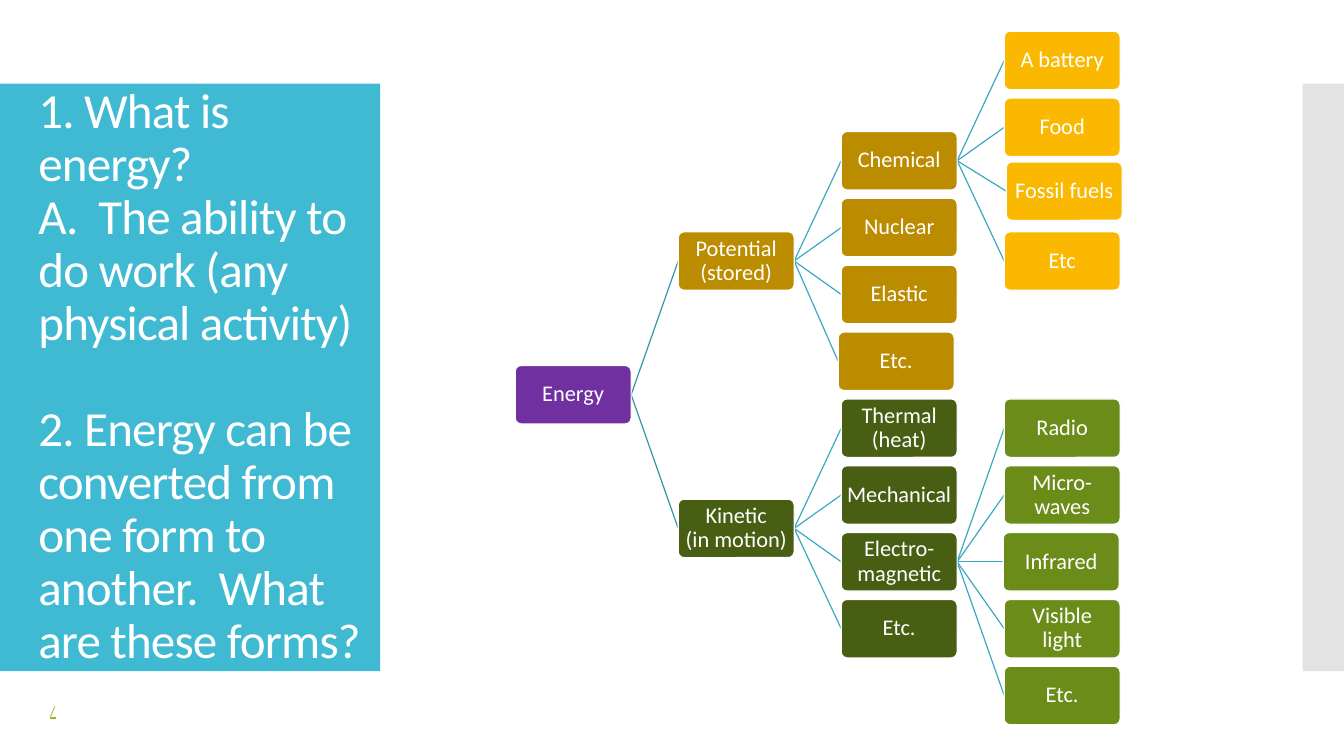
import pptx
import pptx.util
import pptx.dml.color
import pptx.enum.shapes
import pptx.enum.text
import pptx.oxml
import lxml.etree
from pptx.oxml.ns import qn

RGB = pptx.dml.color.RGBColor
WHITE = RGB(0xFF, 0xFF, 0xFF)
TEAL = RGB(0x40, 0xBA, 0xD2)
GREY = RGB(0xC8, 0xC8, 0xC8)
LIME = RGB(0x90, 0xBB, 0x23)
PURPLE = RGB(0x70, 0x30, 0xA0)
BROWN = RGB(0xBB, 0x8B, 0x00)
GOLD = RGB(0xFA, 0xB9, 0x00)
DARK = RGB(0x48, 0x5E, 0x12)
GREEN = RGB(0x6C, 0x8C, 0x1A)
LINK = RGB(0x33, 0x95, 0xA8)
TWIG = RGB(0x3A, 0xA9, 0xBF)

# Content
TITLE = ["1. What is energy?",
         "A.  The ability to do work (any physical activity)",
         "",
         "2. Energy can be converted from one form to another.  What are these forms?"]

# Each node: label, grid row, children
FUELS = [("A battery", 0, []), ("Food", 1, []),
         ("Fossil fuels", 2, []), ("Etc", 3, [])]
WAVES = [("Radio", 5.5, []), ("Micro-\nwaves", 6.5, []), ("Infrared", 7.5, []),
         ("Visible\nlight", 8.5, []), ("Etc.", 9.5, [])]
STORED = [("Chemical", 1.5, FUELS), ("Nuclear", 2.5, []),
          ("Elastic", 3.5, []), ("Etc.", 4.5, [])]
MOTION = [("Thermal\n(heat)", 5.5, []), ("Mechanical", 6.5, []),
          ("Electro-\nmagnetic", 7.5, WAVES), ("Etc.", 8.5, [])]
TREE = ("Energy", 5, [("Potential\n(stored)", 3, STORED),
                      ("Kinetic\n(in motion)", 7, MOTION)])

# Colours by column for the upper and lower branch
UPPER = [PURPLE, BROWN, BROWN, GOLD]
LOWER = [PURPLE, DARK, DARK, GREEN]
# Small shifts off the grid: (column, row) to (x, y)
NUDGE = {(3, 2): (0.02, -0.03), (2, 4.5): (-0.03, 0), (3, 7.5): (-0.01, 0)}

# Grid in inches
WIDE, HIGH = 13.33, 7.5
LEFT, TOP = 5.11, 0.31
STEP, ROW = 1.62, 0.66
BOX_W, BOX_H = 1.15, 0.58
ROW = (6.61 - TOP) / 9.5
STEP = (9.96 - LEFT) / 3

inch = pptx.util.Inches
deck = pptx.Presentation()
deck.slide_width, deck.slide_height = inch(WIDE), inch(HIGH)
slide = deck.slides.add_slide(deck.slide_layouts[5])
shapes = slide.shapes
KIND = pptx.enum.shapes.MSO_SHAPE
ALIGN = pptx.enum.text.PP_ALIGN


def block(kind, x, y, w, h, fill):
    shape = shapes.add_shape(kind, inch(x), inch(y), inch(w), inch(h))
    shape.shadow.inherit = False
    shape.fill.solid()
    shape.fill.fore_color.rgb = fill
    shape.line.fill.background()
    return shape


def write(shape, lines, size, color, align, inset=None):
    frame = shape.text_frame
    frame.word_wrap = True
    frame.auto_size = pptx.enum.text.MSO_AUTO_SIZE.NONE
    frame.vertical_anchor = pptx.enum.text.MSO_ANCHOR.MIDDLE
    if inset is not None:
        frame.margin_left = frame.margin_right = inch(inset)
        frame.margin_top = frame.margin_bottom = inch(inset)
    para = frame.paragraphs[0]
    para.alignment = align
    para.line_spacing = 0.9
    for i, line in enumerate(lines):
        if i:
            para.add_line_break()
        if line:
            run = para.add_run()
            run.text = line
            run.font.size = pptx.util.Pt(size)
            run.font.name = "Calibri"
            run.font.color.rgb = color
    for gap in para._p.findall(qn("a:br")):
        lines_pr = lxml.etree.SubElement(gap, qn("a:rPr"))
        lines_pr.set("sz", str(size * 100))
    return para


def place(col, row):
    dx, dy = NUDGE.get((col, row), (0, 0))
    return LEFT + col * STEP + dx, TOP + row * ROW + dy


def branch(node, col, hues):
    label, row, kids = node
    x, y = place(col, row)
    # Links from this box to its children
    for kid in kids:
        kx, ky = place(col + 1, kid[1])
        line = shapes.add_connector(
            pptx.enum.shapes.MSO_CONNECTOR.STRAIGHT,
            inch(x + BOX_W), inch(y + BOX_H / 2), inch(kx), inch(ky + BOX_H / 2))
        line.line.color.rgb = TWIG if col else LINK
        line.line.width = pptx.util.Pt(0.85)
        lxml.etree.SubElement(line._element.spPr, qn("a:effectLst"))
    box = block(KIND.ROUNDED_RECTANGLE, x, y, BOX_W, BOX_H, hues[col])
    box.adjustments[0] = 0.1
    box.line.color.rgb = WHITE
    box.line.width = pptx.util.Pt(0.85)
    write(box, label.split("\n"), 16, WHITE, ALIGN.CENTER, 0.01)
    for kid in kids:
        branch(kid, col + 1, hues if col else (UPPER if kid[1] < row else LOWER))


# Side panels
block(KIND.RECTANGLE, 0, 0.83, 3.77, 5.83, TEAL)
side = block(KIND.RECTANGLE, 12.92, 0.83, WIDE - 12.92, 5.83, GREY)
tint = side._element.spPr.find(qn("a:solidFill"))[0]
lxml.etree.SubElement(tint, qn("a:alpha")).set("val", "50000")

# Title, raised above the panels
title = shapes.title
title.left, title.top = inch(0.28), inch(1.23)
title.width, title.height = inch(3.52), inch(5.03)
head = write(title, TITLE, 35, WHITE, ALIGN.LEFT)
for run in head.runs:
    run.font._element.set("spc", "-60")
shapes._spTree.append(title._element)

# Energy tree
branch(TREE, 0, UPPER)

# Footer mark
foot = shapes.add_textbox(inch(0.4), inch(6.93), inch(12.47), inch(0.27))
mark = write(foot, ["/"], 10, LIME, ALIGN.LEFT)
mark.runs[0].font.underline = True

deck.save("out.pptx")
